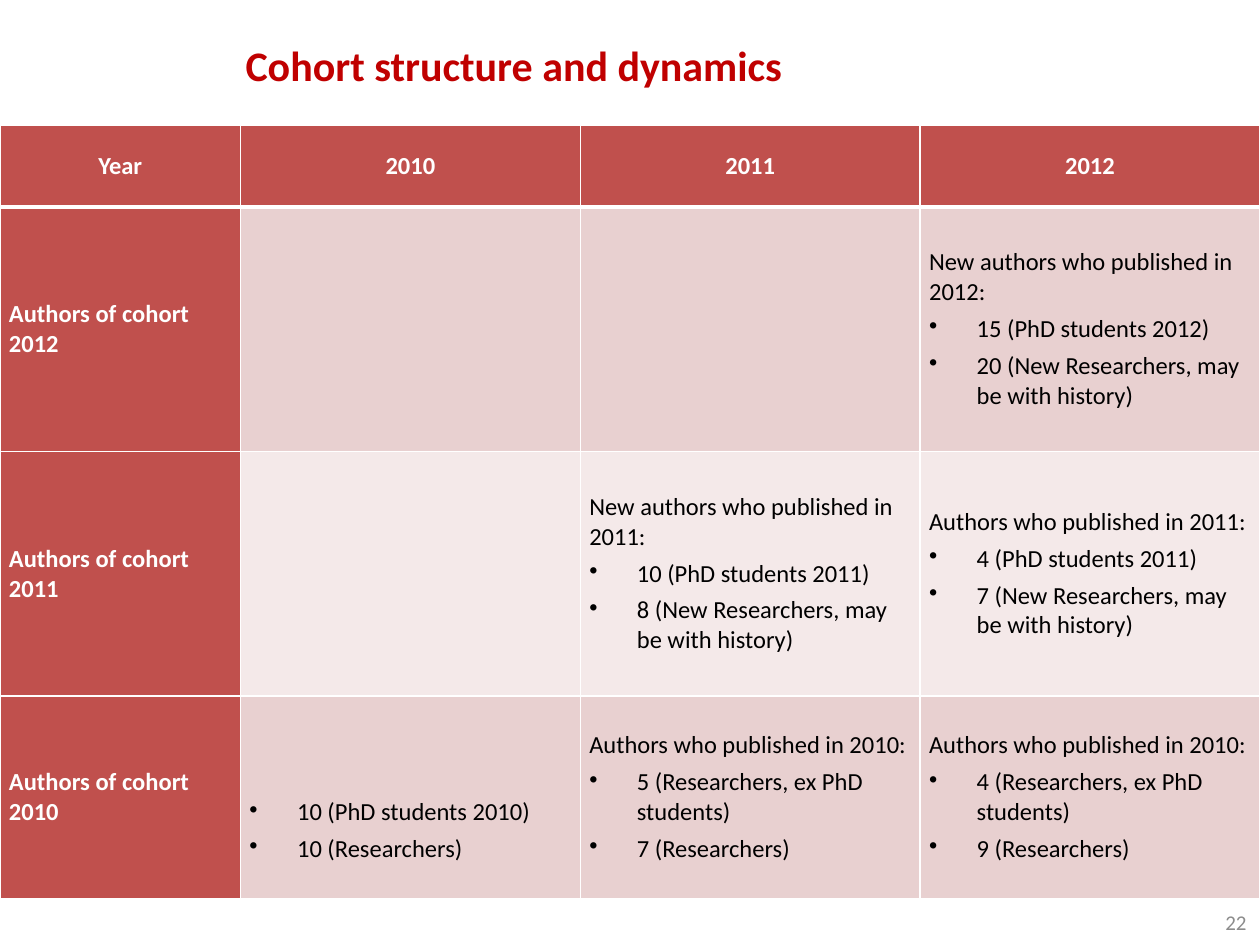
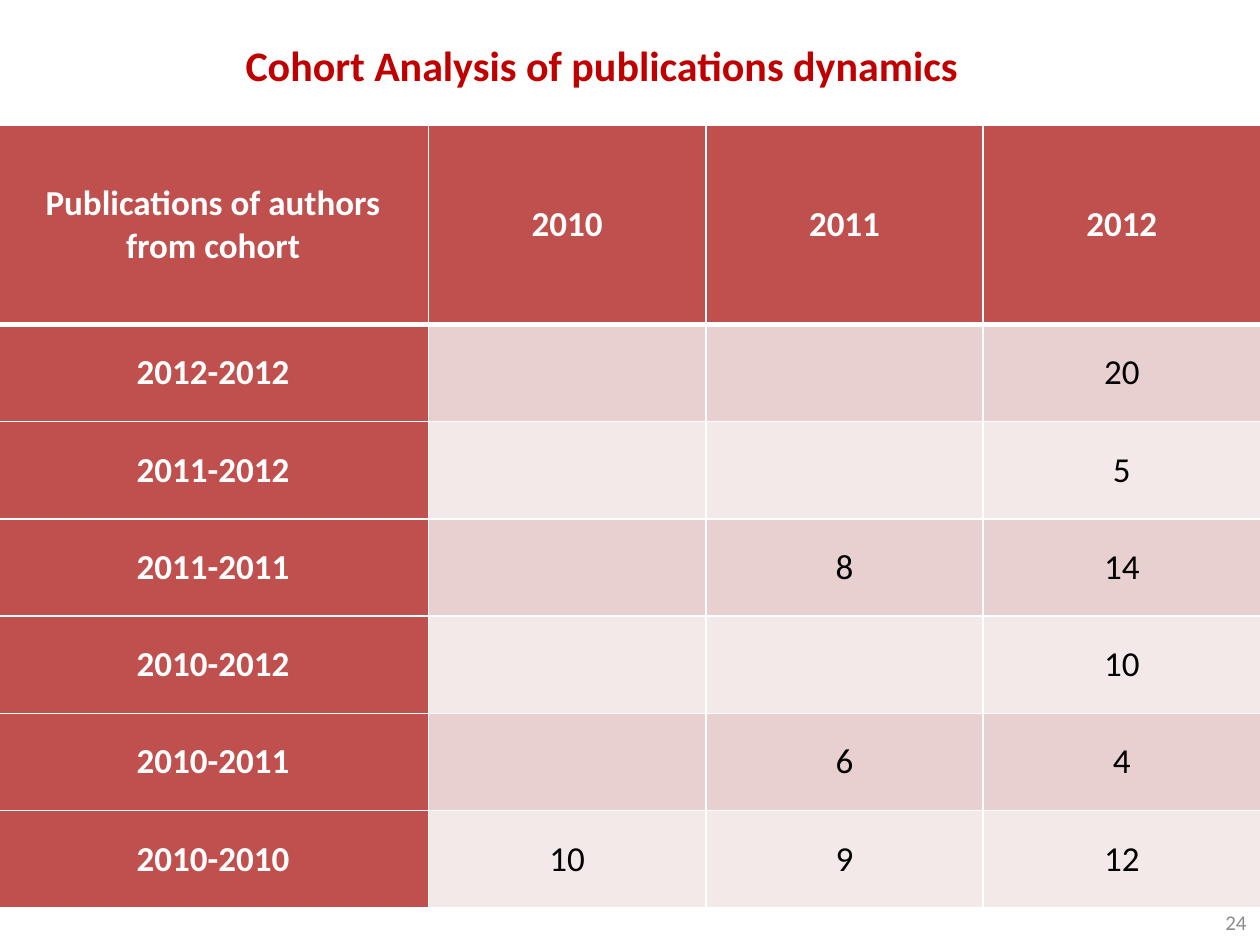
from lxml import etree
from pptx import Presentation
from pptx.dml.color import RGBColor as Rgb
from pptx.enum.text import MSO_ANCHOR as Anchor, PP_ALIGN as Align
from pptx.oxml.ns import qn
from pptx.util import Cm, Pt

COLORS = {"title": "C00000", "head": "C0504D", "odd": "E8D0D0", "even": "F4E9E9",
          "white": "FFFFFF", "text": "000000", "number": "8C8C8C"}
FONT = "Calibri"
BULLET = "• "
YEARS = ["2010", "2011", "2012"]


class Deck:
    def __init__(self):
        self.prs = Presentation()
        self.prs.slide_width, self.prs.slide_height = Cm(25.4), Cm(19.05)
        self.slide = None

    def page(self, title, width, number):
        """Start a slide with its title and page number."""
        self.slide = self.prs.slides.add_slide(self.prs.slide_layouts[6])
        self.label(title, (4.7, 0.33, width, 1.6), 24, "title", Anchor.BOTTOM, bold=True)
        self.label(number, (19.46, 18.08, 5.92, 1.02), 12, "number", Anchor.MIDDLE, Align.RIGHT)

    def label(self, text, place, size, color, anchor, align=Align.LEFT, bold=False):
        frame = self.slide.shapes.add_textbox(*map(Cm, place)).text_frame
        frame.word_wrap = True
        frame.vertical_anchor = anchor
        self.line(frame.paragraphs[0], text, size, color, align, bold)

    def line(self, para, text, size, color, align, bold):
        """Write one paragraph; a leading bullet sign becomes a real bullet."""
        if text.startswith(BULLET):
            props = para._p.get_or_add_pPr()
            props.set("marL", str(Cm(0.96)))
            props.set("indent", str(-Cm(0.96)))
            etree.SubElement(props, qn("a:buChar"), char="•")
        para.text = text.removeprefix(BULLET)
        para.alignment = align
        font = para.font
        font.name, font.size, font.bold = FONT, Pt(size), bold
        font.color.rgb = Rgb.from_string(COLORS[color])

    def table(self, left, cols, heights, rows, size, side, body):
        """Draw a banded table; side and body align the first and other columns."""
        shape = self.slide.shapes.add_table(len(rows), len(cols), Cm(left), Cm(2.52),
                                            Cm(sum(cols)), Cm(sum(heights)))
        grid = shape.table
        grid.first_row = grid.horz_banding = False
        for col, width in zip(grid.columns, cols):
            col.width = Cm(width)
        for r, row in enumerate(rows):
            grid.rows[r].height = Cm(heights[r])
            for c, text in enumerate(row):
                head = r == 0 or c == 0
                fill = "head" if head else "odd" if r % 2 else "even"
                align = Align.CENTER if r == 0 else side if c == 0 else body
                self.cell(grid.cell(r, c), text, size, fill, align, head)
                self.edges(grid.cell(r, c), top=3 if r == 1 else 1, bottom=3 if r == 0 else 1)
        return grid

    def cell(self, cell, text, size, fill, align, head):
        cell.fill.solid()
        cell.fill.fore_color.rgb = Rgb.from_string(COLORS[fill])
        cell.vertical_anchor = Anchor.MIDDLE
        cell.margin_left = cell.margin_right = Cm(0.18)
        cell.margin_top = cell.margin_bottom = 0
        frame = cell.text_frame
        for i, part in enumerate(text.split("\n")):
            para = frame.add_paragraph() if i else frame.paragraphs[0]
            self.line(para, part, size, "white" if head else "text", align, head)
            para.space_after = Pt(4)

    def edges(self, cell, top, bottom):
        props = cell._tc.get_or_add_tcPr()
        for i, (name, width) in enumerate(zip("LRTB", (1, 1, top, bottom))):
            edge = etree.Element(qn("a:ln" + name), w=str(Pt(width)))
            paint = etree.SubElement(edge, qn("a:solidFill"))
            etree.SubElement(paint, qn("a:srgbClr"), val=COLORS["white"])
            props.insert(i, edge)


def group(lead, *items):
    """Join an optional lead line and its bullets."""
    return "\n".join([lead] * bool(lead) + [BULLET + item for item in items])


def main():
    deck = Deck()

    deck.page("Cohort structure and dynamics", 14.2, "22")
    fresh = "(New Researchers, may be with history)"
    grown = "(Researchers, ex PhD students)"
    past = "Authors who published in "
    cohorts = [
        ["Year", *YEARS],
        ["Authors of cohort 2012", "", "",
         group("New authors who published in 2012:", "15 (PhD students 2012)", "20 " + fresh)],
        ["Authors of cohort 2011", "",
         group("New authors who published in 2011:", "10 (PhD students 2011)", "8 " + fresh),
         group(past + "2011:", "4 (PhD students 2011)", "7 " + fresh)],
        ["Authors of cohort 2010",
         group("", "10 (PhD students 2010)", "10 (Researchers)"),
         group(past + "2010:", "5 " + grown, "7 (Researchers)"),
         group(past + "2010:", "4 " + grown, "9 (Researchers)")],
    ]
    grid = deck.table(0, [4.85] + [6.85] * 3, [1.65, 4.93, 4.93, 4.08], cohorts, 14,
                      Align.LEFT, Align.LEFT)
    grid.cell(3, 1).margin_top = Cm(1.35)

    deck.page("Cohort Analysis of publications dynamics", 20.7, "24")
    counts = [
        ["Publications of authors from cohort", *YEARS],
        ["2012-2012", "", "", "20"],
        ["2011-2012", "", "", "5"],
        ["2011-2011", "", "8", "14"],
        ["2010-2012", "", "", "10"],
        ["2010-2011", "", "6", "4"],
        ["2010-2010", "10", "9", "12"],
    ]
    deck.table(-0.05, [8.69] + [5.59] * 3, [4.02] + [1.96] * 6, counts, 20,
               Align.CENTER, Align.CENTER)

    deck.prs.save("out.pptx")


if __name__ == "__main__":
    main()
